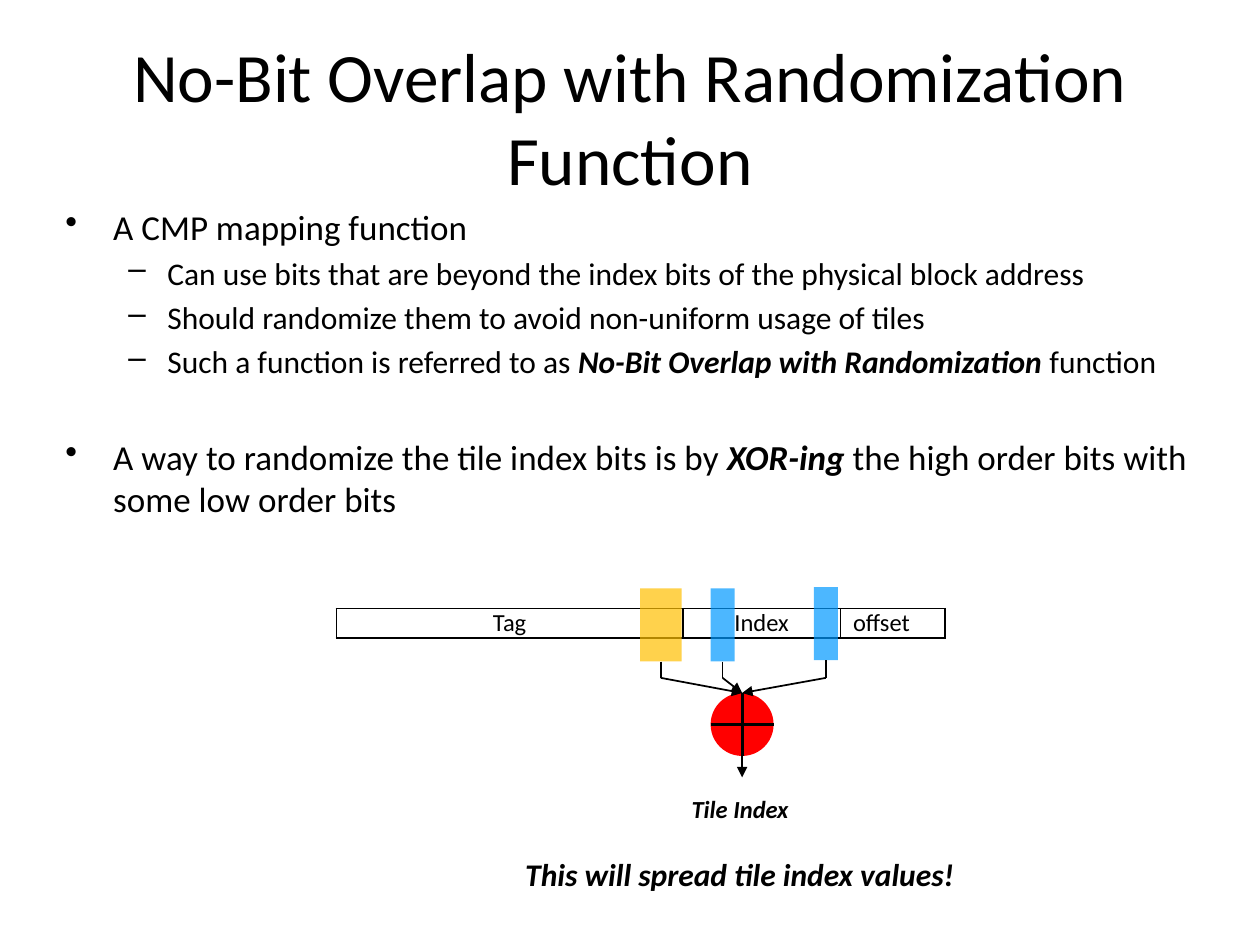
from lxml.etree import SubElement
from pptx import Presentation
from pptx.dml.color import RGBColor
from pptx.enum.shapes import MSO_CONNECTOR, MSO_SHAPE
from pptx.enum.text import MSO_ANCHOR, PP_ALIGN
from pptx.oxml.ns import qn
from pptx.util import Inches, Pt

HEX = {"ink": "000000", "high": "FFC000", "low": "0099FF", "xor": "FF0000"}
FONT = "Calibri"

deck = Presentation()
deck.slide_width, deck.slide_height = Inches(10), Inches(7.5)
slide = deck.slides.add_slide(deck.slide_layouts[6])
shapes = slide.shapes


def style(para, size, bold=None):
    font = para.font
    font.name, font.size = FONT, Pt(size)
    font.bold = font.italic = bold
    font.color.rgb = RGBColor.from_string(HEX["ink"])


def link(start, end, width=1, arrow=False, box=None):
    line = shapes.add_connector(MSO_CONNECTOR.STRAIGHT, *map(Inches, start + end))
    if box is not None:
        line.begin_connect(box, 2)
    line.line.width = Pt(width)
    line.line.color.rgb = RGBColor.from_string(HEX["ink"])
    if arrow:
        SubElement(line.line._get_or_add_ln(), qn("a:tailEnd"), type="triangle")
    SubElement(line._element.spPr, qn("a:effectLst"))


title = shapes.add_textbox(Inches(0.5), Inches(0.3), Inches(9), Inches(1.25)).text_frame
title.word_wrap = True
title.vertical_anchor = MSO_ANCHOR.MIDDLE
title.text = "No-Bit Overlap with Randomization Function"
title.paragraphs[0].alignment = PP_ALIGN.CENTER
style(title.paragraphs[0], 39.6)

points = [
    (0, 0, [("A CMP mapping function", False)]),
    (1, 3.6, [("Can use bits that are beyond the index bits of the physical block address", False)]),
    (1, 3.6, [("Should randomize them to avoid non-uniform usage of tiles", False)]),
    (1, 3.6, [("Such a function is referred to as ", False),
              ("No-Bit Overlap with Randomization ", True), ("function", False)]),
    (0, 32, [("A way to randomize the tile index bits is by ", False), ("XOR-ing", True),
             (" the high order bits with some low order bits", False)]),
]
levels = [("•", 20, 0.38, -0.38), ("–", 18, 0.81, -0.31)]
body = shapes.add_textbox(Inches(0.42), Inches(1.58), Inches(9.25), Inches(5.58)).text_frame
body.word_wrap = True
for num, (level, gap, runs) in enumerate(points):
    para = body.add_paragraph() if num else body.paragraphs[0]
    mark, size, left, hang = levels[level]
    para.level = level
    para.space_before = Pt(gap)
    style(para, size)
    for text, strong in runs:
        run = para.add_run()
        run.text = text
        if strong:
            run.font.bold = run.font.italic = True
    props = para._p.get_or_add_pPr()
    props.set("marL", str(Inches(left)))
    props.set("indent", str(Inches(hang)))
    bullet = SubElement(props, qn("a:buChar"), char=mark)
    props.find(qn("a:defRPr")).addprevious(bullet)

fields = [("Tag", 2.75, PP_ALIGN.CENTER), ("Index", 1.25, PP_ALIGN.CENTER),
          ("offset", 0.83, PP_ALIGN.LEFT)]
table = shapes.add_table(1, 3, Inches(2.67), Inches(4.83), Inches(4.83), Inches(0.23)).table
table.first_row = table.horz_banding = False
for num, (text, width, align) in enumerate(fields):
    table.columns[num].width = Inches(width)
    cell = table.cell(0, num)
    cell.text = text
    cell.margin_top = cell.margin_bottom = 0
    para = cell.text_frame.paragraphs[0]
    para.alignment = align
    style(para, 14)
    props = cell._tc.get_or_add_tcPr()
    for side in ("lnL", "lnR", "lnT", "lnB"):
        edge = SubElement(props, qn("a:" + side), w=str(Pt(1)))
        SubElement(SubElement(edge, qn("a:solidFill")), qn("a:srgbClr"), val=HEX["ink"])
    cell.fill.background()

blocks = [
    (MSO_SHAPE.OVAL, 5.64, 5.5, 0.5, 0.5, "xor"),
    (MSO_SHAPE.RECTANGLE, 5.08, 4.67, 0.33, 0.58, "high"),
    (MSO_SHAPE.RECTANGLE, 5.64, 4.67, 0.19, 0.58, "low"),
    (MSO_SHAPE.RECTANGLE, 6.46, 4.66, 0.19, 0.58, "low"),
]
top = (5.89, 5.5)
for kind, left, y, width, height, tone in blocks:
    block = shapes.add_shape(kind, *map(Inches, (left, y, width, height)))
    block.shadow.inherit = False
    block.fill.solid()
    block.fill.fore_color.rgb = RGBColor.from_string(HEX[tone])
    block.line.fill.background()
    if kind == MSO_SHAPE.RECTANGLE:
        color = block._element.spPr.find(qn("a:solidFill"))[0]
        SubElement(color, qn("a:alpha"), val="70000")
        mid = left + width / 2
        link((mid, y + height), (mid, 5.38), box=block)
        link((mid, 5.38), top, arrow=True)

link(top, (5.89, 6), width=1.75)
link((5.64, 5.75), (6.14, 5.75), width=1.75)
link((5.89, 6), (5.89, 6.17), arrow=True)

notes = [("Tile Index", 14, 5.39, 6.25, 0.98, 0.34),
         ("This will spread tile index values!", 18, 4.07, 6.74, 3.65, 0.4)]
for text, size, *place in notes:
    frame = shapes.add_textbox(*map(Inches, place)).text_frame
    frame.word_wrap = False
    frame.text = text
    style(frame.paragraphs[0], size, True)

deck.save("out.pptx")
